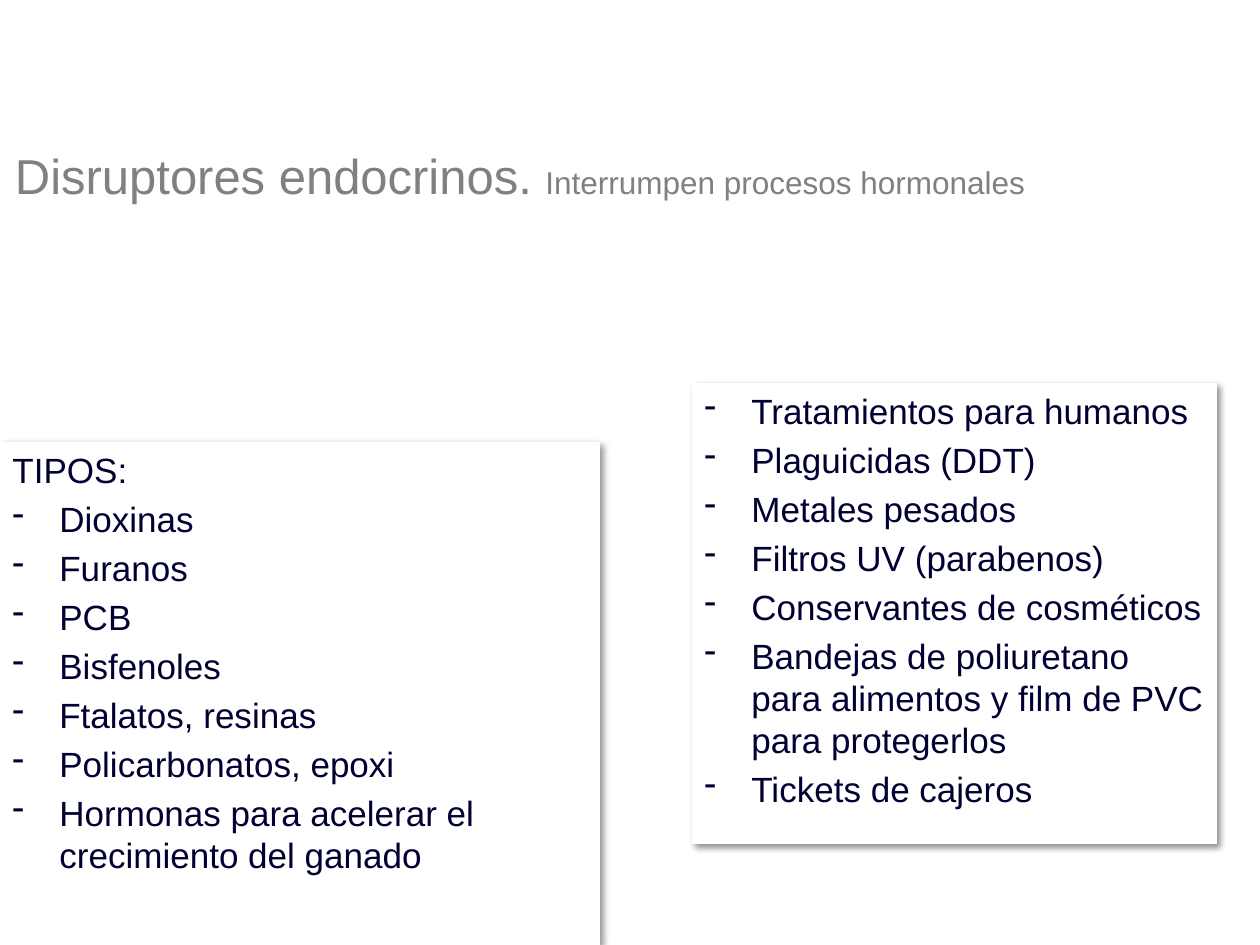
from lxml.etree import SubElement
from pptx import Presentation
from pptx.dml.color import RGBColor
from pptx.enum.shapes import MSO_SHAPE as Shape
from pptx.enum.text import MSO_ANCHOR as Anchor, PP_ALIGN as Align
from pptx.oxml import parse_xml
from pptx.oxml.ns import nsdecls, qn
from pptx.util import Emu, Pt

FONT = "Arial"
WHITE, NAVY, GREY = "FFFFFF", "000032", "808080"
TITLE_BOX = (15, 145, 1052, 97)
TITLE = [("Disruptores endocrinos. ", 28), ("Interrumpen procesos hormonales", 18)]
PANELS = [
    {
        "box": (0, 442, 600, 503),
        "heading": ["TIPOS:"],
        "items": [
            "Dioxinas",
            "Furanos",
            "PCB",
            "Bisfenoles",
            "Ftalatos, resinas",
            "Policarbonatos, epoxi",
            "Hormonas para acelerar el crecimiento del ganado",
        ],
    },
    {
        "box": (692, 383, 525, 461),
        "heading": [],
        "items": [
            "Tratamientos para humanos",
            "Plaguicidas (DDT)",
            "Metales pesados",
            "Filtros UV (parabenos)",
            "Conservantes de cosméticos",
            "Bandejas de poliuretano para alimentos y film de PVC para protegerlos",
            "Tickets de cajeros",
        ],
    },
]
SHADOW = f"""<a:effectLst {nsdecls("a")}>
  <a:outerShdw blurRad="50800" dist="38100" dir="2700000" algn="tl" rotWithShape="0">
    <a:srgbClr val="000000"><a:alpha val="43000"/></a:srgbClr>
  </a:outerShdw>
</a:effectLst>"""


def px(length):
    return Emu(round(length * 914400 / 126))


def color(hex_code):
    return RGBColor.from_string(hex_code)


def style(span, size, hex_code):
    span.font.name = FONT
    span.font.size = Pt(size)
    span.font.color.rgb = color(hex_code)


def add_dash(para):
    """Give the paragraph a hanging dash bullet."""
    props = para._p.get_or_add_pPr()
    props.set("marL", str(px(47)))
    props.set("indent", str(-px(47)))
    SubElement(props, qn("a:buFontTx"))
    SubElement(props, qn("a:buChar")).set("char", "-")


def add_title(page):
    title = page.shapes.title
    title.left, title.top, title.width, title.height = map(px, TITLE_BOX)
    frame = title.text_frame
    frame.word_wrap = False
    frame.vertical_anchor = Anchor.TOP
    frame.margin_left = frame.margin_right = 0
    frame.margin_top = frame.margin_bottom = 0
    para = frame.paragraphs[0]
    para.alignment = Align.LEFT
    for text, size in TITLE:
        span = para.add_run()
        span.text = text
        style(span, size, GREY)


def add_panel(page, panel):
    box = page.shapes.add_shape(Shape.RECTANGLE, *map(px, panel["box"]))
    box.fill.solid()
    box.fill.fore_color.rgb = color(WHITE)
    box.line.fill.background()
    box._element.spPr.append(parse_xml(SHADOW))
    frame = box.text_frame
    frame.word_wrap = True
    frame.vertical_anchor = Anchor.TOP
    frame.margin_right = px(8)
    lines = panel["heading"] + panel["items"]
    frame.text = "\n".join(lines)
    for index, para in enumerate(frame.paragraphs):
        para.alignment = Align.LEFT
        para.space_before = Pt(4)
        if index >= len(panel["heading"]):
            add_dash(para)
        style(para.runs[0], 20, NAVY)


def main():
    deck = Presentation()
    deck.slide_width, deck.slide_height = px(1260), px(945)
    page = deck.slides.add_slide(deck.slide_layouts[5])
    add_title(page)
    for panel in PANELS:
        add_panel(page, panel)
    deck.save("out.pptx")


if __name__ == "__main__":
    main()
